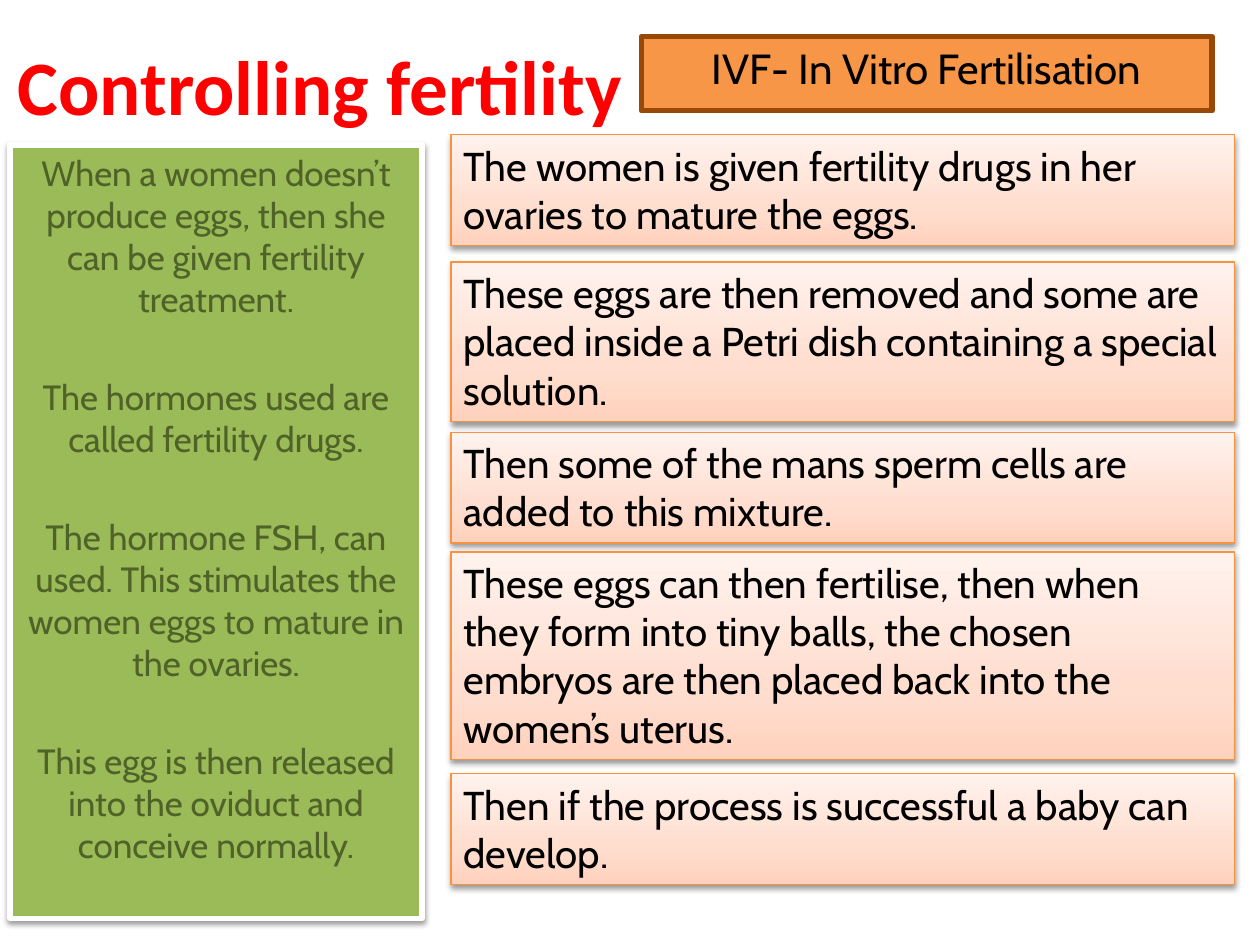
import copy

import pptx
import pptx.dml.color
import pptx.enum.shapes
import pptx.enum.text
import pptx.oxml
import pptx.oxml.ns
import pptx.util

COLS, ROWS = 100, 75
Pt = pptx.util.Pt
ALIGN = pptx.enum.text.PP_ALIGN
ANCHOR = pptx.enum.text.MSO_ANCHOR
FIT = pptx.enum.text.MSO_AUTO_SIZE

prs = pptx.Presentation()
prs.slide_width, prs.slide_height = pptx.util.Inches(10), pptx.util.Inches(7.5)

TREATMENT = [
    "When a women doesn’t produce eggs, then she can be given fertility treatment.",
    "The hormones used are called fertility drugs.",
    "The hormone FSH, can used. This stimulates the women eggs to mature in the ovaries.",
    "This egg is then released into the oviduct and conceive normally.",
]
STEPS = [
    (0, 2, "The women is given fertility drugs in her ovaries to mature the eggs."),
    (10.1, 3, "These eggs are then removed and some are placed inside a Petri dish "
              "containing a special solution."),
    (23.6, 2, "Then some of the mans sperm cells are added to this mixture."),
    (33.1, 4, "These eggs can then fertilise, then when they form into tiny balls, the chosen "
              "embryos are then placed back into the women’s uterus."),
    (50.7, 2, "Then if the process is successful a baby can develop."),
]


def rgb(color):
    """Turn a hex string into a colour."""
    return pptx.dml.color.RGBColor.from_string(color)


def cells(x, y, w, h):
    """Turn grid columns and rows into slide lengths."""
    cw, rh = prs.slide_width / COLS, prs.slide_height / ROWS
    return [round(v) for v in (x * cw, y * rh, w * cw, h * rh)]


def place(sp, box):
    """Put a placeholder on a grid box."""
    sp.left, sp.top, sp.width, sp.height = cells(*box)


def outline(sp, color, width):
    """Give a shape its line."""
    sp.line.color.rgb = rgb(color)
    sp.line.width = Pt(width)


def solid(sp, color):
    """Fill a shape with one colour."""
    sp.fill.solid()
    sp.fill.fore_color.rgb = rgb(color)


def gradient(sp, stops, angle):
    """Fill a shape with a linear gradient of any number of stops."""
    sp.fill.gradient()
    sp.fill.gradient_angle = angle
    gs = sp._element.spPr.find(".//" + pptx.oxml.ns.qn("a:gsLst"))
    for _ in stops[2:]:
        gs.append(copy.deepcopy(gs[-1]))
    for stop, (position, color) in zip(sp.fill.gradient_stops, stops):
        stop.position = position
        stop.color.rgb = rgb(color)


def soft_shadow(sp):
    """Give a shape a soft shadow below it."""
    sp.shadow.inherit = False
    effects = sp._element.spPr.find(pptx.oxml.ns.qn("a:effectLst"))
    effects.append(pptx.oxml.parse_xml(
        f'<a:outerShdw {pptx.oxml.ns.nsdecls("a")} blurRad="40000" dist="20000" dir="5400000" '
        'rotWithShape="0"><a:srgbClr val="000000"><a:alpha val="38000"/></a:srgbClr></a:outerShdw>'))


def write(sp, texts, font, size, color, align, before=0, gap=0, bold=False,
          anchor=ANCHOR.TOP, fit=FIT.NONE):
    """Write unbulleted paragraphs into a shape."""
    tf = sp.text_frame
    tf.word_wrap, tf.auto_size, tf.vertical_anchor = True, fit, anchor
    for i, text in enumerate(texts):
        p = tf.add_paragraph() if i else tf.paragraphs[0]
        p.alignment = align
        p.space_before = Pt(gap if i else before)
        pPr = p._p.get_or_add_pPr()
        pPr.set("marL", "0")
        pPr.set("indent", "0")
        pPr.append(pptx.oxml.parse_xml(f'<a:buNone {pptx.oxml.ns.nsdecls("a")}/>'))
        r = p.add_run()
        r.text = text
        r.font.name, r.font.size, r.font.bold = font, Pt(size), bold
        r.font.color.rgb = rgb(color)


def heading(sp, box):
    """Set the slide title."""
    place(sp, box)
    write(sp, ["Controlling fertility"], "Calibri", 44, "FF0000", ALIGN.LEFT,
          bold=True, anchor=ANCHOR.MIDDLE)


def treatment_panel(sp, box):
    """Set the green panel on fertility treatment."""
    place(sp, box)
    solid(sp, "9BBB59")
    outline(sp, "FFFFFF", 3)
    soft_shadow(sp)
    write(sp, TREATMENT, "Cabin", 20, "4F6228", ALIGN.CENTER, before=4, gap=32)


def ivf_banner(sp, box):
    """Set the orange banner that names the method."""
    place(sp, box)
    solid(sp, "F79646")
    outline(sp, "984807", 3)
    write(sp, ["IVF- In Vitro Fertilisation"], "Cabin", 24, "000000", ALIGN.CENTER, before=4.8)


def step_cards(s, box):
    """Stack the steps of IVF, each card as tall as its lines."""
    x, y, w, line_height = box
    group = s.shapes.add_group_shape()
    for offset, lines, text in STEPS:
        sp = group.shapes.add_shape(pptx.enum.shapes.MSO_SHAPE.RECTANGLE,
                                    *cells(x, y + offset, w, 1.1 + lines * line_height))
        gradient(sp, [(0, "FFD2BD"), (0.35, "FFDED0"), (1, "FFF2ED")], 90)
        outline(sp, "F69240", 0.75)
        soft_shadow(sp)
        write(sp, [text], "Cabin", 23, "000000", ALIGN.LEFT, fit=FIT.SHAPE_TO_FIT_TEXT)


def main():
    """Build the slide and save it."""
    s = prs.slides.add_slide(prs.slide_layouts.get_by_name("Two Content"))
    heading(s.shapes.title, (0.4, 0.5, 90, 12.5))
    treatment_panel(s.placeholders[1], (0.8, 11.5, 32.7, 61.4))
    ivf_banner(s.placeholders[2], (50.9, 2.9, 45.3, 5.9))
    step_cards(s, (35.8, 10.7, 62.2, 3.85))
    for sp in list(s.placeholders):
        if not sp.text_frame.text:
            sp._element.getparent().remove(sp._element)
    prs.save("out.pptx")


if __name__ == "__main__":
    main()
